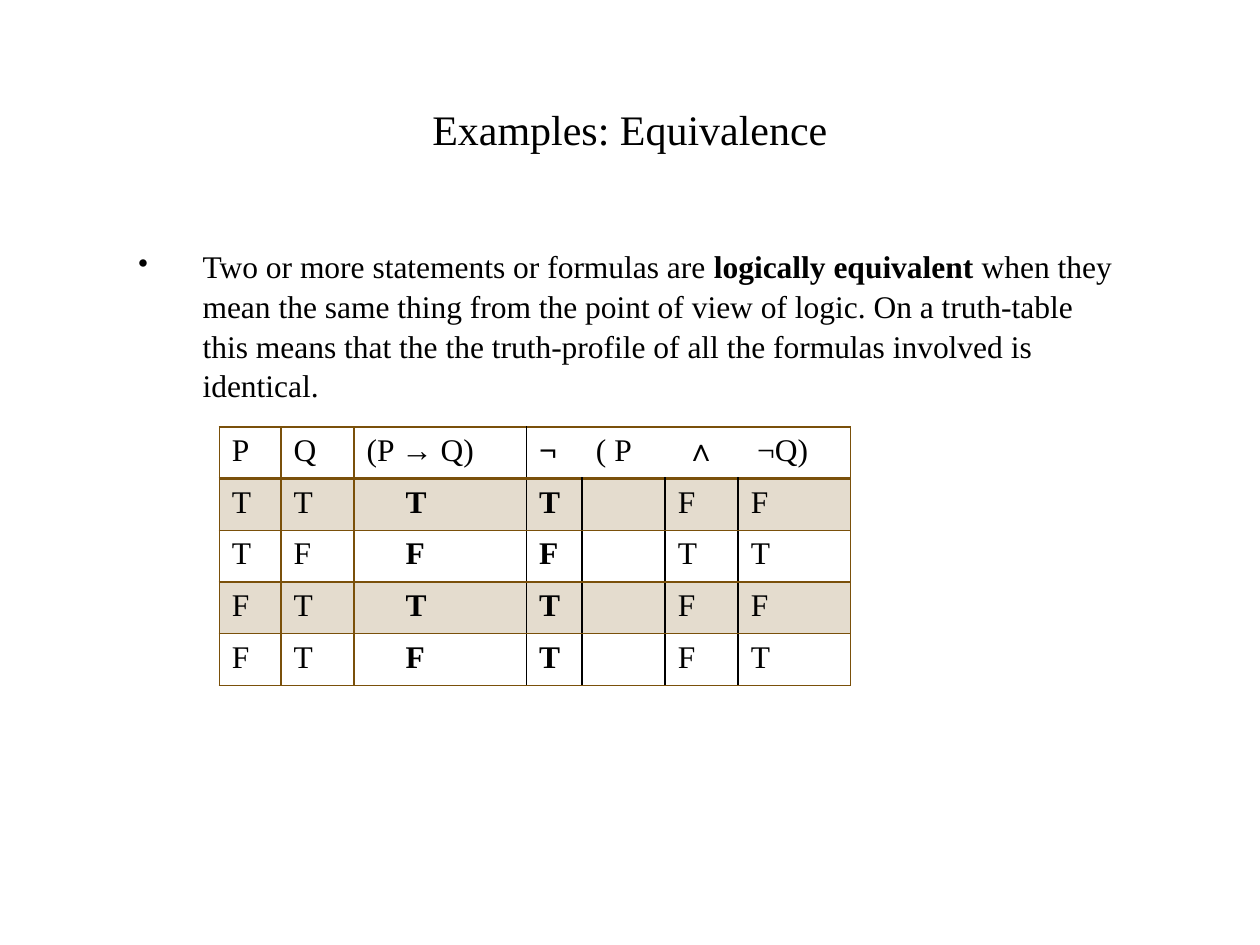
from dataclasses import dataclass

from lxml import etree
from pptx import Presentation
from pptx.dml.color import RGBColor
from pptx.enum.text import MSO_ANCHOR, PP_ALIGN
from pptx.oxml.ns import qn
from pptx.util import Inches, Pt

CENTER, MIDDLE = PP_ALIGN.CENTER, MSO_ANCHOR.MIDDLE
FONT = "Times New Roman"
BLACK, BROWN = "000000", "7A500A"
COLS = [0.49, 0.58, 1.37, 0.44, 0.66, 0.58, 0.89]
ROW = 0.41
BOLD_COLS = (2, 3)
BLACK_EDGES = range(3, 7)
HEAD = ["P", "Q", "(P → Q)", "¬\t( P\t∧\t¬Q)"]
HEAD_TABS = [0.45, 1.16, 1.73]
TRUTH = ["TTTT FF", "TFFF TT", "FTTT FF", "FTFT FT"]


@dataclass
class Box:
    left: float
    top: float
    width: float
    height: float

    def place(self) -> list:
        return [Inches(n) for n in (self.left, self.top, self.width, self.height)]


@dataclass
class Part:
    text: str
    bold: bool = False


def color(code: str) -> RGBColor:
    return RGBColor.from_string(code)


def add(parent, tag: str, **attrs):
    node = etree.SubElement(parent, qn(tag))
    for key, value in attrs.items():
        node.set(key, str(value))
    return node


def write(para, parts: list[Part], size: int = 18) -> None:
    for part in parts:
        run = para.add_run()
        run.text = part.text
        font = run.font
        font.name, font.size, font.bold = FONT, Pt(size), part.bold
        font.color.rgb = color(BLACK)


def add_text(slide, box: Box):
    frame = slide.shapes.add_textbox(*box.place()).text_frame
    frame.word_wrap = True
    return frame


def add_bullet(para, indent: float) -> None:
    props = para._p.get_or_add_pPr()
    props.set("marL", str(Inches(indent)))
    props.set("indent", str(-Inches(indent)))
    add(props, "a:buSzPct", val=90000)
    add(props, "a:buChar", char="•")


def add_tabs(para, stops: list[float]) -> None:
    tabs = add(para._p.get_or_add_pPr(), "a:tabLst")
    for stop in stops:
        add(tabs, "a:tab", pos=Inches(stop), algn="l")


def set_edge(cell, side: str, code: str, width: float = 1) -> None:
    line = add(cell._tc.get_or_add_tcPr(), f"a:ln{side}", w=Pt(width))
    add(add(line, "a:solidFill"), "a:srgbClr", val=code)


def style_cell(cell, row: int, col: int) -> None:
    """Draw the borders, then the tint of every second row."""
    for side, edge in (("L", col), ("R", col + cell.span_width)):
        set_edge(cell, side, BLACK if edge in BLACK_EDGES else BROWN)
    set_edge(cell, "T", BROWN, 2 if row == 1 else 1)
    set_edge(cell, "B", BROWN, 2 if row == 0 else 1)
    if row % 2:
        cell.fill.solid()
        cell.fill.fore_color.rgb = color(BROWN)
        tint = cell._tc.tcPr.find(qn("a:solidFill")).find(qn("a:srgbClr"))
        add(tint, "a:alpha", val=20000)
    else:
        cell.fill.background()


def add_truth(slide, left: float, top: float) -> None:
    rows = [HEAD] + TRUTH
    box = Box(left, top, sum(COLS), ROW * len(rows))
    table = slide.shapes.add_table(len(rows), len(COLS), *box.place()).table
    table.first_row = table.horz_banding = False
    for col, width in enumerate(COLS):
        table.columns[col].width = Inches(width)
    table.cell(0, 3).merge(table.cell(0, 6))
    for r, marks in enumerate(rows):
        table.rows[r].height = Inches(ROW)
        for c, mark in enumerate(marks):
            cell = table.cell(r, c)
            style_cell(cell, r, c)
            para = cell.text_frame.paragraphs[0]
            if r == 0 and c == 3:
                add_tabs(para, HEAD_TABS)
                write(para, [Part(mark[0], True), Part(mark[1:])])
            elif mark != " ":
                write(para, [Part(mark, r > 0 and c in BOLD_COLS)])
            if r and c == 2:
                cell.margin_left = Inches(0.41)


def main() -> None:
    deck = Presentation()
    deck.slide_width, deck.slide_height = Inches(10), Inches(7.5)
    slide = deck.slides.add_slide(deck.slide_layouts[6])

    title = add_text(slide, Box(1, 0.55, 8, 0.95))
    title.vertical_anchor = MIDDLE
    title.paragraphs[0].alignment = CENTER
    write(title.paragraphs[0], [Part("Examples: Equivalence")], 24)

    body = add_text(slide, Box(1, 1.9, 8, 4.44)).paragraphs[0]
    add_bullet(body, 0.51)
    body.line_spacing = 1.05
    write(body, [
        Part("Two or more statements or formulas are "),
        Part("logically equivalent ", True),
        Part("when they mean the same thing from the point of view of logic. "
             "On a truth-table this means that the the truth-profile of all "
             "the formulas involved is identical."),
    ])

    add_truth(slide, 1.74, 3.39)
    deck.save("out.pptx")


if __name__ == "__main__":
    main()
